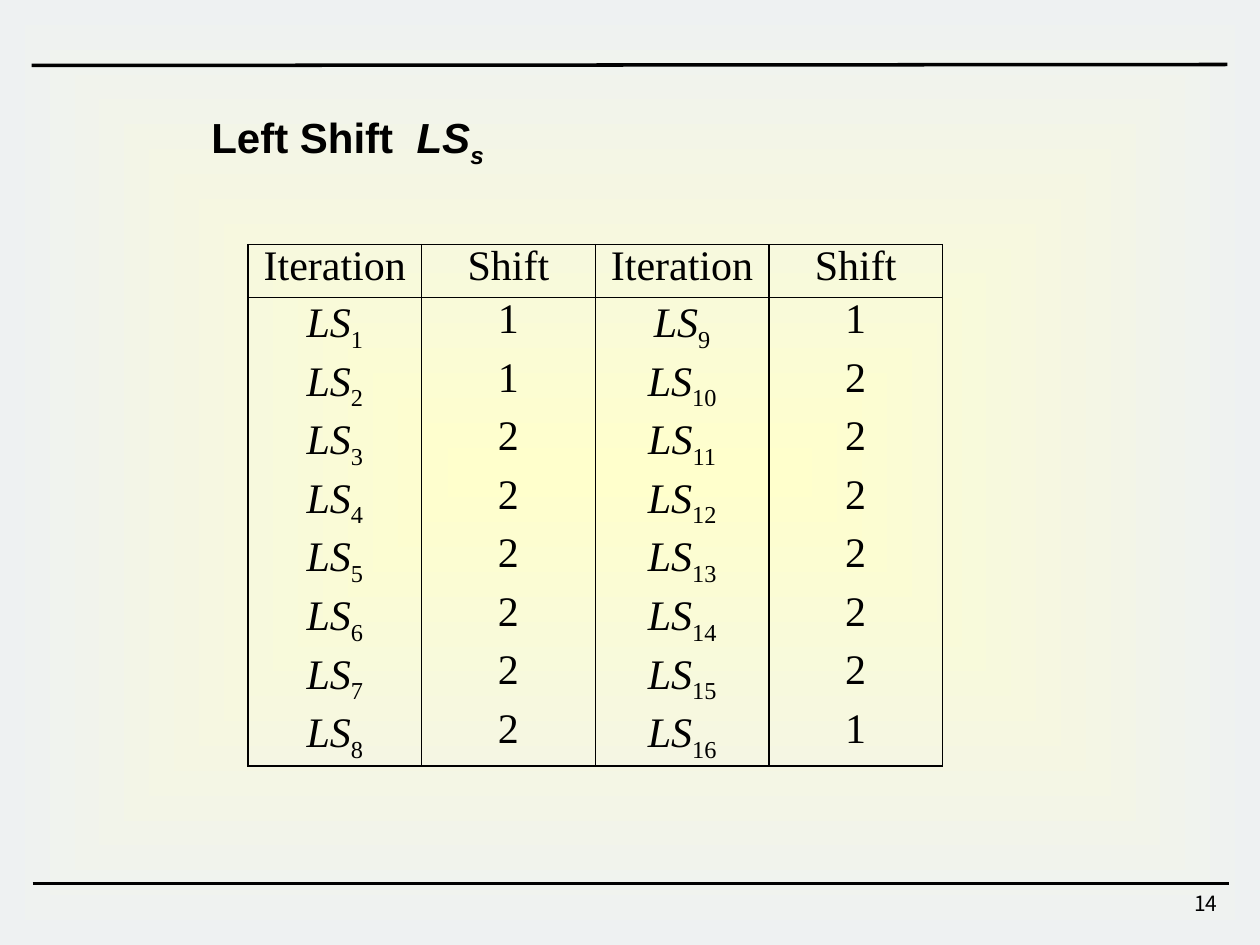
from lxml.etree import SubElement
from pptx import Presentation
from pptx.dml.color import RGBColor
from pptx.enum.shapes import MSO_CONNECTOR as Connector, MSO_SHAPE as Shape
from pptx.enum.text import PP_ALIGN as Align
from pptx.oxml.ns import qn
from pptx.util import Cm, Pt

BLACK = RGBColor(0x00, 0x00, 0x00)
CREAM = RGBColor(0xFF, 0xFF, 0xCC)
MIST = RGBColor(0xEE, 0xF1, 0xF2)

TITLE = {"name": "Arial", "size": Pt(24), "bold": True}
NUMBER = {"name": "Noto Sans CJK KR", "size": Pt(12)}
CELL = {"name": "Times New Roman", "size": Pt(24), "bold": False}

SHIFTS = [1, 1, 2, 2, 2, 2, 2, 2, 1, 2, 2, 2, 2, 2, 2, 1]
HALF = len(SHIFTS) // 2
ROW_HEIGHTS = [1.02, 1.12] + [0.97] * 6 + [1.07]


def add_run(paragraph, text, style, italic=False, subscript=False):
    run = paragraph.add_run()
    run.text = text
    for name, value in {**style, "italic": italic}.items():
        setattr(run.font, name, value)
    run.font.color.rgb = BLACK
    if subscript:
        run.font._element.set("baseline", "-25000")


def add_background(slide, left, top, width, height):
    """Fill the box with a gradient that spreads from its centre."""
    shape = slide.shapes.add_shape(Shape.RECTANGLE, left, top, width, height)
    shape.shadow.inherit = False
    shape.line.fill.background()
    shape.fill.gradient()
    for stop, color in zip(shape.fill.gradient_stops, (CREAM, MIST)):
        stop.color.rgb = color
    gradient = shape._element.spPr.find(qn("a:gradFill"))
    gradient.remove(gradient.find(qn("a:lin")))
    spread = SubElement(gradient, qn("a:path"), path="rect")
    SubElement(spread, qn("a:fillToRect"), l="50000", t="50000", r="50000", b="50000")


def add_rule(slide, left, top, right, bottom):
    line = slide.shapes.add_connector(Connector.STRAIGHT, left, top, right, bottom)
    line.line.color.rgb = BLACK
    line.line.width = Pt(2)
    SubElement(line._element.spPr, qn("a:effectLst"))


def add_title(slide, left, top, width, height):
    frame = slide.shapes.add_textbox(left, top, width, height).text_frame
    frame.word_wrap = False
    paragraph = frame.paragraphs[0]
    add_run(paragraph, "Left Shift  ", TITLE)
    add_run(paragraph, "LS", TITLE, italic=True)
    add_run(paragraph, "s", TITLE, italic=True, subscript=True)


def add_slide_number(slide, left, top, width, height):
    frame = slide.shapes.add_textbox(left, top, width, height).text_frame
    frame.word_wrap = True
    paragraph = frame.paragraphs[0]
    paragraph.alignment = Align.RIGHT
    add_run(paragraph, "14", NUMBER)


def set_borders(cell, visible):
    """Draw the sides named in visible (from L, R, T, B) and hide the others."""
    properties = cell._tc.get_or_add_tcPr()
    for side in "LRTB":
        border = SubElement(properties, qn(f"a:ln{side}"), w=str(Pt(1)))
        if side in visible:
            fill = SubElement(border, qn("a:solidFill"))
            SubElement(fill, qn("a:srgbClr"), val=str(BLACK))
        else:
            SubElement(border, qn("a:noFill"))
    cell.fill.background()


def format_cell_paragraph(paragraph):
    paragraph.alignment = Align.CENTER
    paragraph.line_spacing = 0.8
    space_before = SubElement(paragraph._p.get_or_add_pPr(), qn("a:spcBef"))
    SubElement(space_before, qn("a:spcPct"), val="20000")


def add_shift_table(slide, left, top, width, height):
    """Show the iterations in two halves, each a pair of columns."""
    table = slide.shapes.add_table(HALF + 1, 4, left, top, width, height).table
    table.first_row = table.horz_banding = False
    for row, row_height in zip(table.rows, ROW_HEIGHTS):
        row.height = Cm(row_height)
    for row in range(HALF + 1):
        for column in range(4):
            cell = table.cell(row, column)
            paragraph = cell.text_frame.paragraphs[0]
            format_cell_paragraph(paragraph)
            iteration = column // 2 * HALF + row
            is_shift = column % 2 == 1
            if row == 0:
                add_run(paragraph, "Shift" if is_shift else "Iteration", CELL)
            elif is_shift:
                add_run(paragraph, str(SHIFTS[iteration - 1]), CELL)
            else:
                add_run(paragraph, "LS", CELL, italic=True)
                add_run(paragraph, str(iteration), CELL, subscript=True)
            sides = {0: "LRTB", 1: "LRT", HALF: "LRB"}
            set_borders(cell, sides.get(row, "LR"))


def main():
    presentation = Presentation()
    presentation.slide_width, presentation.slide_height = Cm(25.4), Cm(19.05)
    slide = presentation.slides.add_slide(presentation.slide_layouts[6])
    add_background(slide, 0, 0, presentation.slide_width, presentation.slide_height)
    add_rule(slide, Cm(0.64), Cm(1.32), Cm(24.74), Cm(1.3))
    add_rule(slide, Cm(0.66), Cm(17.81), Cm(24.77), Cm(17.81))
    add_slide_number(slide, Cm(19.51), Cm(17.83), Cm(5.28), Cm(0.84))
    add_title(slide, Cm(4.01), Cm(2.13), Cm(6.05), Cm(1.27))
    add_shift_table(slide, Cm(5), Cm(4.93), Cm(14), Cm(9.65))
    presentation.save("out.pptx")


if __name__ == "__main__":
    main()
